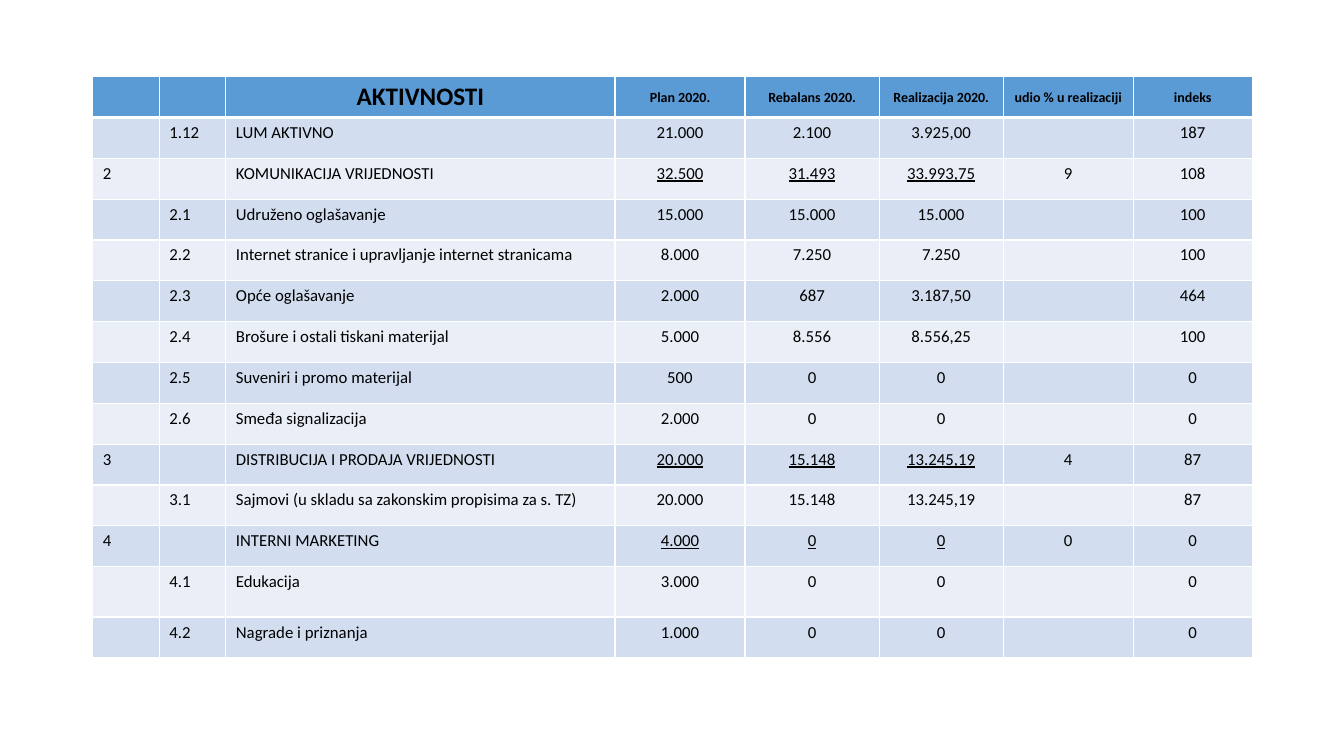
import dataclasses
import pptx
import pptx.dml.color
import pptx.enum.text
import pptx.oxml
import pptx.oxml.ns
import pptx.util

Inches = pptx.util.Inches
Pt = pptx.util.Pt


@dataclasses.dataclass(frozen=True)
class Theme:
    font: str = "Calibri"
    ink: str = "000000"
    rule: str = "FFFFFF"
    header: str = "5B9BD5"
    bands: tuple = ("D2DEEF", "EAEFF7")
    heading_size: int = 18
    label_size: int = 10
    body_size: int = 12


THEME = Theme()
WIDTHS = [0.66, 0.66, 3.86, 1.29, 1.33, 1.23, 1.29, 1.18]
ACTIVITY = 2
AMOUNTS = range(3, 6)
TALL_ROW = 12
TALL_HEIGHT = 0.5
HEADER = ["", "", "AKTIVNOSTI", "Plan 2020.", "Rebalans 2020.",
          "Realizacija 2020.", "udio % u realizaciji", "indeks"]
ACTIVITIES = [
    ["", "1.12", "LUM AKTIVNO", "21.000", "2.100", "3.925,00", "", "187"],
    ["2", "", "KOMUNIKACIJA VRIJEDNOSTI", "32.500", "31.493", "33.993,75", "9", "108"],
    ["", "2.1", "Udruženo oglašavanje", "15.000", "15.000", "15.000", "", "100"],
    ["", "2.2", "Internet stranice i upravljanje internet stranicama",
     "8.000", "7.250", "7.250", "", "100"],
    ["", "2.3", "Opće oglašavanje", "2.000", "687", "3.187,50", "", "464"],
    ["", "2.4", "Brošure i ostali tiskani materijal", "5.000", "8.556", "8.556,25", "", "100"],
    ["", "2.5", "Suveniri i promo materijal", "500", "0", "0", "", "0"],
    ["", "2.6", "Smeđa signalizacija", "2.000", "0", "0", "", "0"],
    ["3", "", "DISTRIBUCIJA I PRODAJA VRIJEDNOSTI", "20.000", "15.148", "13.245,19", "4", "87"],
    ["", "3.1", "Sajmovi (u skladu sa zakonskim propisima za s. TZ)",
     "20.000", "15.148", "13.245,19", "", "87"],
    ["4", "", "INTERNI MARKETING", "4.000", "0", "0", "0", "0"],
    ["", "4.1", "Edukacija", "3.000", "0", "0", "", "0"],
    ["", "4.2", "Nagrade i priznanja", "1.000", "0", "0", "", "0"],
]


def set_borders(cell, top, bottom):
    properties = cell._tc.get_or_add_tcPr()
    sides = {"lnL": 1, "lnR": 1, "lnT": top, "lnB": bottom}
    for index, (side, width) in enumerate(sides.items()):
        line = pptx.oxml.parse_xml(
            f'<a:{side} {pptx.oxml.ns.nsdecls("a")} w="{Pt(width)}">'
            f'<a:solidFill><a:srgbClr val="{THEME.rule}"/></a:solidFill></a:{side}>')
        properties.insert(index, line)


def fill_cell(cell, text, color, size, bold=False, underline=False, centred=False):
    cell.fill.solid()
    cell.fill.fore_color.rgb = pptx.dml.color.RGBColor.from_string(color)
    cell.text = text
    para = cell.text_frame.paragraphs[0]
    if centred:
        para.alignment = pptx.enum.text.PP_ALIGN.CENTER
    font = para.font
    font.name = THEME.font
    font.size = Pt(size)
    font.bold = bold
    font.underline = underline
    font.color.rgb = pptx.dml.color.RGBColor.from_string(THEME.ink)


def fill_header(table):
    for column, text in enumerate(HEADER):
        cell = table.cell(0, column)
        size = THEME.label_size if column > ACTIVITY else THEME.heading_size
        fill_cell(cell, text, THEME.header, size, bold=True, centred=True)
        set_borders(cell, 1, 3)
        if column > ACTIVITY:
            cell.vertical_anchor = pptx.enum.text.MSO_ANCHOR.MIDDLE
            cell.margin_left = cell.margin_right = cell.margin_top = Inches(0.01)
            cell.margin_bottom = 0


def fill_activities(table):
    for row, values in enumerate(ACTIVITIES, 1):
        is_section = values[0] != ""
        for column, text in enumerate(values):
            cell = table.cell(row, column)
            fill_cell(cell, text, THEME.bands[(row - 1) % 2], THEME.body_size,
                      underline=is_section and column in AMOUNTS,
                      centred=column > ACTIVITY)
            set_borders(cell, 3 if row == 1 else 1, 1)


def add_budget_table(page, left, top, width, height):
    row_count = len(ACTIVITIES) + 1
    table = page.shapes.add_table(row_count, len(WIDTHS), Inches(left), Inches(top),
                                  Inches(width), Inches(height)).table
    for column, share in zip(table.columns, WIDTHS):
        column.width = Inches(width * share / sum(WIDTHS))
    for index, row in enumerate(table.rows):
        plain_height = (height - TALL_HEIGHT) / (row_count - 1)
        row.height = Inches(TALL_HEIGHT if index == TALL_ROW else plain_height)
    fill_header(table)
    fill_activities(table)


def main():
    deck = pptx.Presentation()
    deck.slide_width = Inches(13.33)
    deck.slide_height = Inches(7.5)
    page = deck.slides.add_slide(deck.slide_layouts[6])
    add_budget_table(page, 0.92, 0.76, 11.5, 5.77)
    deck.save("out.pptx")


if __name__ == "__main__":
    main()
